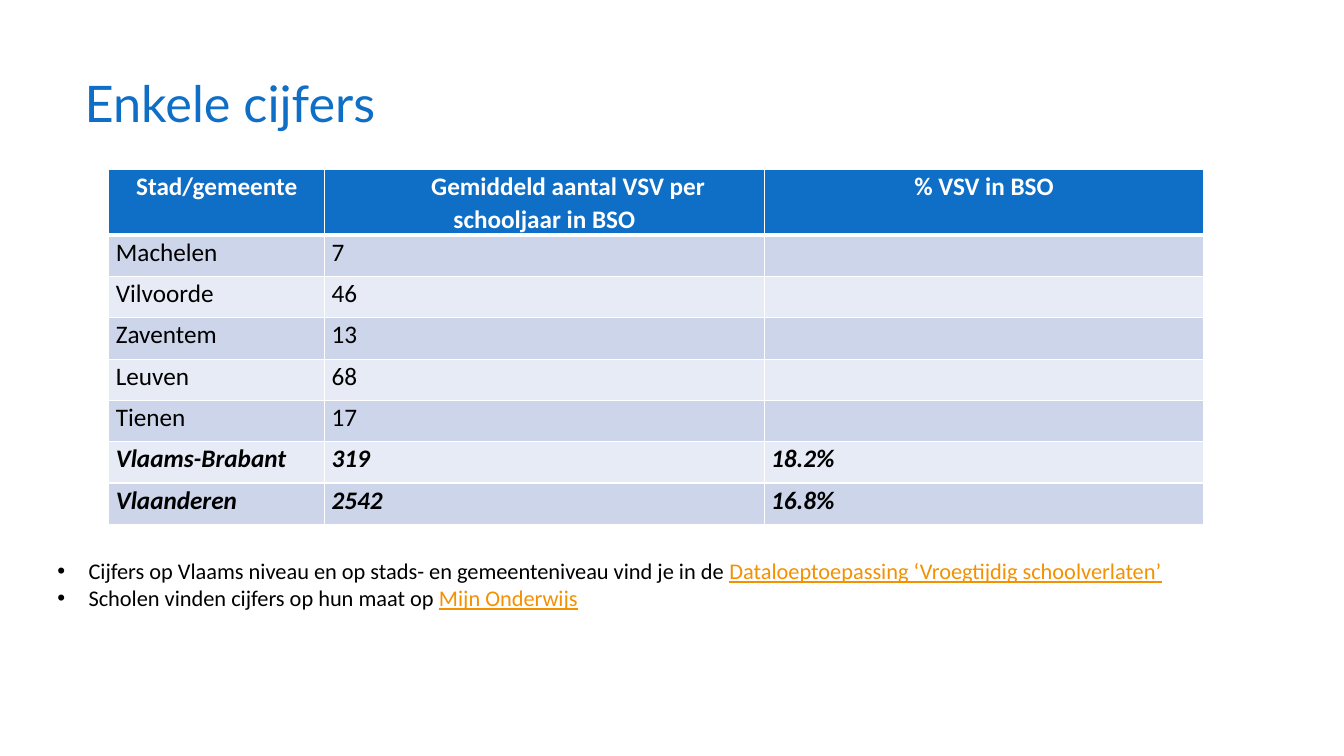
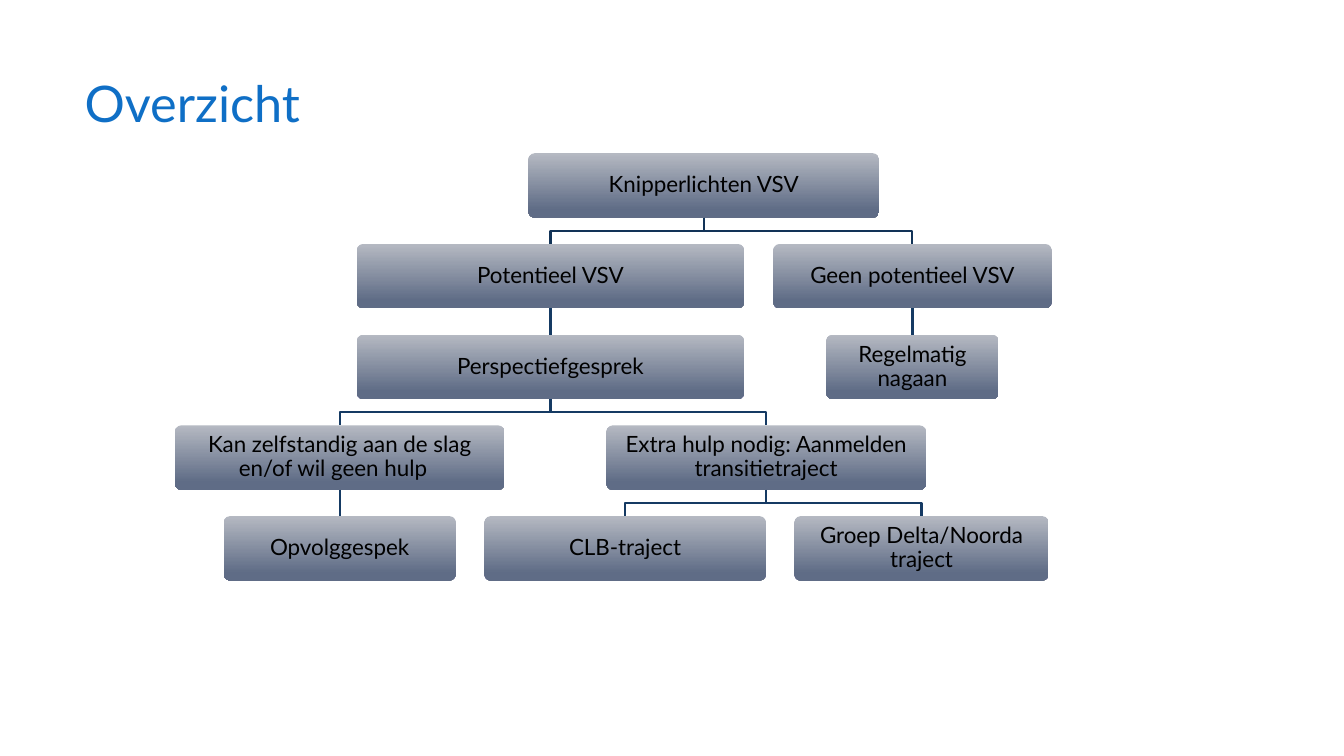
from lxml import etree
from pptx import Presentation
from pptx.dml.color import RGBColor
from pptx.enum.shapes import MSO_CONNECTOR, MSO_SHAPE
from pptx.enum.text import MSO_ANCHOR, PP_ALIGN
from pptx.oxml.ns import qn
from pptx.util import Emu, Inches, Pt

ELBOW, STRAIGHT = MSO_CONNECTOR.ELBOW, MSO_CONNECTOR.STRAIGHT
ROUNDED = MSO_SHAPE.ROUNDED_RECTANGLE
TOP, MIDDLE = MSO_ANCHOR.TOP, MSO_ANCHOR.MIDDLE
LEFT, CENTER = PP_ALIGN.LEFT, PP_ALIGN.CENTER
BOTTOM_SITE, TOP_SITE = 2, 0

# Shared look
BLUE, WHITE, BLACK, ORANGE = "0F6FC6", "FFFFFF", "000000", "F49100"
BANDS = ("CCD5EA", "E7EBF5")
BOX_TOP_COLOR, BOX_BOTTOM_COLOR = "B5B9C2", "5F6C86"
ROOT_LINE, BRANCH_LINE = "123357", "153A63"
HEAD_FONT, BODY_FONT = "Lato", "Calibri"

# Table content
COLUMN_WIDTHS = (2.14, 4.36, 4.36)
ROW_HEIGHT = 0.41
FIGURES = [
    ("Stad/gemeente", "Gemiddeld aantal VSV per schooljaar in BSO", "% VSV in BSO"),
    ("Machelen", "7", ""),
    ("Vilvoorde", "46", ""),
    ("Zaventem", "13", ""),
    ("Leuven", "68", ""),
    ("Tienen", "17", ""),
    ("Vlaams-Brabant", "319", "18.2%"),
    ("Vlaanderen", "2542", "16.8%"),
]
TOTAL_ROWS = ("Vlaams-Brabant", "Vlaanderen")
SOURCES = [
    ("Cijfers op Vlaams niveau en op stads- en gemeenteniveau vind je in de ",
     "Dataloeptoepassing ‘Vroegtijdig schoolverlaten’"),
    ("Scholen vinden cijfers op hun maat op ", "Mijn Onderwijs"),
]

# Tree content: key, parent, level, centre, width, label
LEVEL_TOP, LEVEL_STEP, BOX_HEIGHT = 1.52, 0.9, 0.64
STEPS = [
    ("signals", None, 0, 6.98, 3.48, "Knipperlichten VSV"),
    ("potential", "signals", 1, 5.46, 3.84, "Potentieel VSV"),
    ("none", "signals", 1, 9.05, 2.76, "Geen potentieel VSV"),
    ("talk", "potential", 2, 5.46, 3.84, "Perspectiefgesprek"),
    ("check", "none", 2, 9.05, 1.71, "Regelmatig nagaan"),
    ("alone", "talk", 3, 3.37, 3.27,
     "Kan zelfstandig aan de slag en/of wil geen hulp\t"),
    ("help", "talk", 3, 7.6, 3.17, "Extra hulp nodig: Aanmelden transitietraject"),
    ("follow", "alone", 4, 3.37, 2.3, "Opvolggespek"),
    ("clb", "help", 4, 6.2, 2.79, "CLB-traject"),
    ("group", "help", 4, 9.14, 2.52, "Groep Delta/Noorda traject"),
]


def rgb(color):
    return RGBColor.from_string(color)


def style_font(font, name, size, color, bold=False, italic=False):
    font.name, font.size = name, Pt(size)
    font.bold, font.italic = bold, italic
    font.color.rgb = rgb(color)


def set_insets(target, horizontal, vertical):
    target.margin_left = target.margin_right = Inches(horizontal)
    target.margin_top = target.margin_bottom = Inches(vertical)


def add_titled_slide(deck, title):
    slide = deck.slides.add_slide(deck.slide_layouts[5])
    heading = slide.shapes.title
    heading.left, heading.top = Inches(0.74), Inches(0.67)
    heading.width, heading.height = Inches(9.4), Inches(1.02)
    frame = heading.text_frame
    frame.text = title
    frame.vertical_anchor = TOP
    paragraph = frame.paragraphs[0]
    paragraph.alignment = LEFT
    style_font(paragraph.runs[0].font, HEAD_FONT, 36, BLUE)
    return slide


def set_cell_borders(cell, bottom_width):
    properties = cell._tc.get_or_add_tcPr()
    for side, width in (("L", 1), ("R", 1), ("T", 1), ("B", bottom_width)):
        line = etree.SubElement(properties, qn(f"a:ln{side}"), w=str(Pt(width)))
        fill = etree.SubElement(line, qn("a:solidFill"))
        etree.SubElement(fill, qn("a:srgbClr"), val=WHITE)


def fill_cell(cell, text, row, total):
    header = row == 0
    set_cell_borders(cell, 3 if header else 1)
    cell.fill.solid()
    cell.fill.fore_color.rgb = rgb(BLUE if header else BANDS[(row - 1) % 2])
    set_insets(cell, 0.07, 0)
    cell.text = text
    paragraph = cell.text_frame.paragraphs[0]
    paragraph.line_spacing = 1.07
    paragraph.alignment = CENTER if header else LEFT
    style_font(paragraph.font, BODY_FONT, 18, WHITE if header else BLACK,
               header or total, total)
    for run in paragraph.runs:
        style_font(run.font, BODY_FONT, 18, WHITE if header else BLACK,
                   header or total, total)


def add_figures_table(slide):
    table = slide.shapes.add_table(
        len(FIGURES), len(COLUMN_WIDTHS), Inches(1.08), Inches(1.68),
        Inches(sum(COLUMN_WIDTHS)), Inches(ROW_HEIGHT * len(FIGURES))).table
    for column, width in zip(table.columns, COLUMN_WIDTHS):
        column.width = Inches(width)
    for row, values in enumerate(FIGURES):
        table.rows[row].height = Inches(ROW_HEIGHT)
        for column, text in enumerate(values):
            fill_cell(table.cell(row, column), text, row, values[0] in TOTAL_ROWS)
    # The middle heading has a first-line indent
    average = table.cell(0, 1).text_frame.paragraphs[0]
    average._p.get_or_add_pPr().set("indent", str(Inches(0.47)))


def add_bullet(paragraph):
    properties = paragraph._p.get_or_add_pPr()
    properties.set("marL", str(Inches(0.31)))
    properties.set("indent", str(-Inches(0.31)))
    etree.SubElement(properties, qn("a:buFont"), typeface="Arial")
    etree.SubElement(properties, qn("a:buChar"), char="•")


def add_sources(slide):
    frame = slide.shapes.add_textbox(
        Inches(0.47), Inches(5.48), Inches(11.86), Inches(0.94)).text_frame
    frame.word_wrap = True
    for index, (lead, source) in enumerate(SOURCES):
        paragraph = frame.add_paragraph() if index else frame.paragraphs[0]
        add_bullet(paragraph)
        for text, color in ((lead, BLACK), (source, ORANGE)):
            run = paragraph.add_run()
            run.text = text
            style_font(run.font, BODY_FONT, 16, color)
            run.font.underline = color == ORANGE


def add_step(slide, level, center, width, label):
    box = slide.shapes.add_shape(
        ROUNDED, Inches(center - width / 2), Inches(LEVEL_TOP + LEVEL_STEP * level),
        Inches(width), Inches(BOX_HEIGHT))
    box.adjustments[0] = 0.1
    box.shadow.inherit = False
    box.line.fill.background()
    box.fill.gradient()
    box.fill.gradient_angle = 270
    stops = zip(box.fill.gradient_stops, (0, 0.88), (BOX_TOP_COLOR, BOX_BOTTOM_COLOR))
    for stop, position, color in stops:
        stop.position = position
        stop.color.rgb = rgb(color)
    frame = box.text_frame
    frame.word_wrap = True
    frame.vertical_anchor = MIDDLE
    set_insets(frame, 0.07, 0.07)
    frame.text = label
    paragraph = frame.paragraphs[0]
    paragraph.alignment = CENTER
    paragraph.line_spacing = 0.9
    style_font(paragraph.runs[0].font, HEAD_FONT, 16, BLACK)
    return box


def turn_elbow(link, start_x, start_y, end_x, end_y):
    """Turn the elbow so that it leaves and arrives vertically."""
    length, breadth = end_y - start_y, abs(end_x - start_x)
    link.left = Emu((start_x + end_x - length) // 2)
    link.top = Emu((start_y + end_y - breadth) // 2)
    link.width, link.height = Emu(length), Emu(breadth)
    frame = link._element.spPr.find(qn("a:xfrm"))
    to_right = end_x > start_x
    frame.set("rot", "16200000" if to_right else "5400000")
    frame.set("flipH", "1" if to_right else "0")


def link_steps(slide, parent, child, parent_center, child_center, color):
    start = (Inches(parent_center), parent.top + parent.height)
    end = (Inches(child_center), child.top)
    bent = parent_center != child_center
    link = slide.shapes.add_connector(ELBOW if bent else STRAIGHT, *start, *end)
    link.begin_connect(parent, BOTTOM_SITE)
    link.end_connect(child, TOP_SITE)
    if bent:
        turn_elbow(link, *start, *end)
    link.line.color.rgb = rgb(color)
    link.line.width = Pt(1.5)
    etree.SubElement(link._element.spPr, qn("a:effectLst"))


def add_tree(slide):
    boxes, centers = {}, {}
    for key, parent, level, center, width, label in STEPS:
        boxes[key] = add_step(slide, level, center, width, label)
        centers[key] = center
        if parent:
            link_steps(slide, boxes[parent], boxes[key], centers[parent], center,
                       ROOT_LINE if level == 1 else BRANCH_LINE)


def main():
    deck = Presentation()
    deck.slide_width, deck.slide_height = Inches(13.33), Inches(7.5)

    # Figures per town
    figures = add_titled_slide(deck, "Enkele cijfers")
    add_figures_table(figures)
    add_sources(figures)

    # Decision tree
    add_tree(add_titled_slide(deck, "Overzicht"))

    deck.save("out.pptx")


if __name__ == "__main__":
    main()
